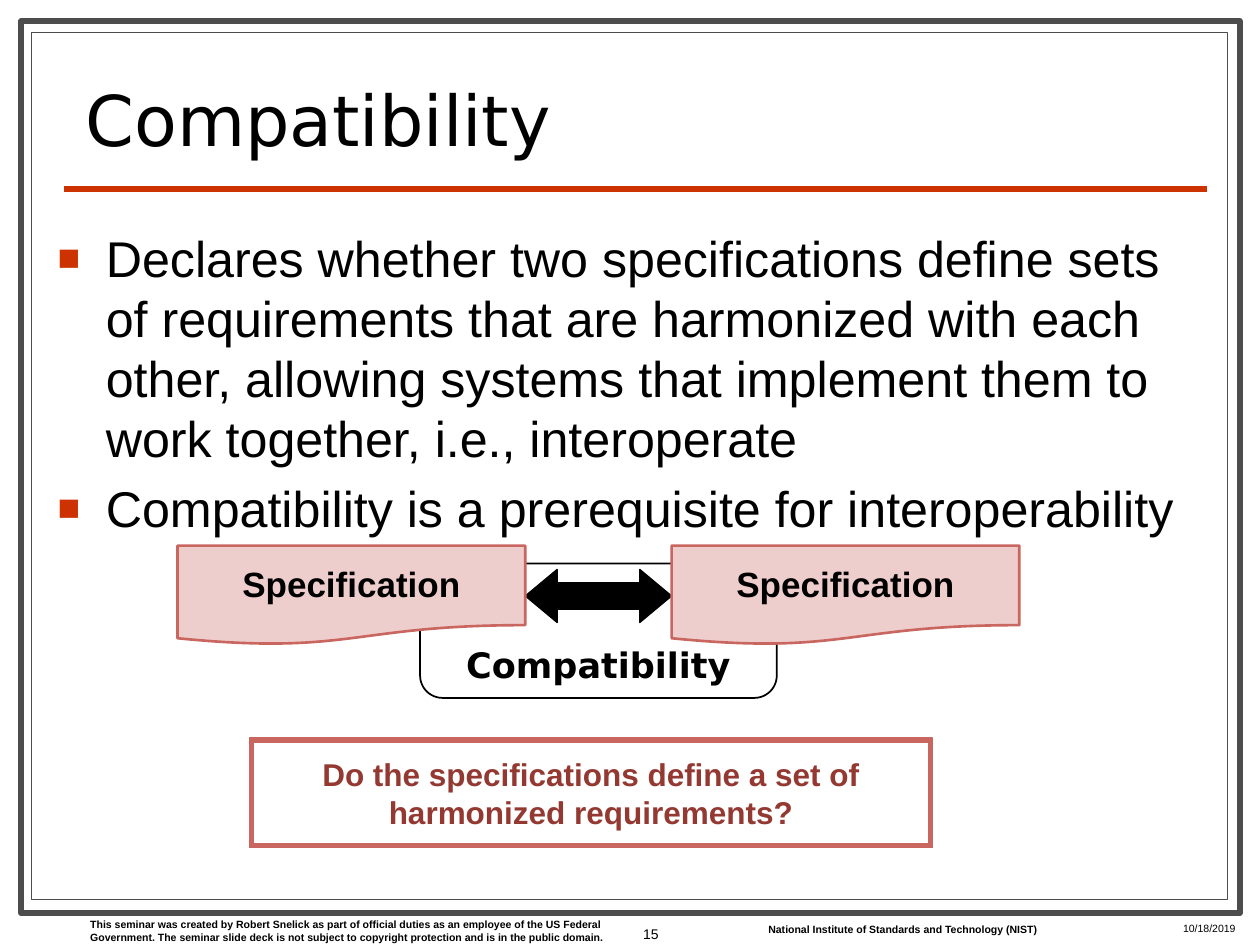
from dataclasses import dataclass

from lxml.etree import SubElement
from pptx import Presentation
from pptx.dml.color import RGBColor
from pptx.enum.shapes import MSO_CONNECTOR as Connector, MSO_SHAPE as Shape
from pptx.enum.text import MSO_ANCHOR as Anchor, MSO_AUTO_SIZE as AutoSize, PP_ALIGN as Align
from pptx.oxml.ns import qn
from pptx.util import Cm, Pt

BLACK = RGBColor(0x00, 0x00, 0x00)
WHITE = RGBColor(0xFF, 0xFF, 0xFF)
GREY = RGBColor(0x4D, 0x4D, 0x4D)
ORANGE = RGBColor(0xCC, 0x33, 0x00)
ROSE = RGBColor(0xC9, 0x66, 0x60)
PALE_ROSE = RGBColor(0xEE, 0xCE, 0xCC)
DARK_RED = RGBColor(0x94, 0x38, 0x32)
SANS = "Arial"
DISPLAY = "DejaVu Sans"


@dataclass
class Box:
    """A rectangle in centimetres."""
    left: float
    top: float
    width: float
    height: float

    def inside(self, left, top, width, height):
        """Return a box placed relative to this one."""
        return Box(self.left + left, self.top + top, width, height)

    def lengths(self):
        """Return left, top, width and height as slide lengths."""
        return [Cm(side) for side in (self.left, self.top, self.width, self.height)]


def style_font(para, size, name=SANS, color=BLACK, bold=False):
    """Set the font of a whole paragraph."""
    font = para.font
    font.size, font.name, font.bold = Pt(size), name, bold
    font.color.rgb = color


def add_figure(page, kind, box, fill, line, weight, adjustments=()):
    """Add a flat preset shape."""
    figure = page.shapes.add_shape(kind, *box.lengths())
    figure.shadow.inherit = False
    figure.fill.solid()
    figure.fill.fore_color.rgb = fill
    figure.line.color.rgb = line
    figure.line.width = Pt(weight)
    for index, value in enumerate(adjustments):
        figure.adjustments[index] = value
    return figure


def write_text(holder, text, size, align=Align.LEFT, anchor=Anchor.TOP, **font):
    """Write one wrapped paragraph and return it."""
    frame = holder.text_frame
    frame.word_wrap = True
    frame.auto_size = AutoSize.NONE
    frame.vertical_anchor = anchor
    para = frame.paragraphs[0]
    para.text = text
    para.alignment = align
    style_font(para, size, **font)
    return para


def settle_placeholder(page, holder, box):
    """Position a placeholder and bring it to the front."""
    holder.left, holder.top, holder.width, holder.height = box.lengths()
    page.shapes.element.append(holder.element)


def add_bullet(para):
    """Give a paragraph a hanging square bullet."""
    props = para._p.get_or_add_pPr()
    props.set("marL", str(Cm(0.97)))
    props.set("indent", str(-Cm(0.97)))
    color = SubElement(props, qn("a:buClr"))
    SubElement(color, qn("a:srgbClr"), val=str(ORANGE))
    SubElement(props, qn("a:buSzPct"), val="75000")
    SubElement(props, qn("a:buFont"), typeface=SANS)
    SubElement(props, qn("a:buChar"), char="■")


def draw_border(page, box):
    """Draw the double border and the rule under the title."""
    add_figure(page, Shape.RECTANGLE, box, WHITE, GREY, 3.5)
    inner = box.inside(0.21, 0.23, box.width - 0.46, box.height - 0.5)
    add_figure(page, Shape.RECTANGLE, inner, WHITE, GREY, 0.75)
    left, right, height = Cm(box.left + 0.87), Cm(box.left + 23.9), Cm(box.top + 3.38)
    rule = page.shapes.add_connector(Connector.STRAIGHT, left, height, right, height)
    rule.line.color.rgb = ORANGE
    rule.line.width = Pt(3)
    SubElement(rule.element.spPr, qn("a:effectLst"))


def place_title(page, box, text):
    """Place the slide title."""
    title = page.shapes.title
    settle_placeholder(page, title, box)
    para = write_text(title, text, 40, anchor=Anchor.BOTTOM, name=DISPLAY)
    para.line_spacing = 0.8


def place_list(page, box, items):
    """Place the bulleted list."""
    body = page.placeholders[1]
    settle_placeholder(page, body, box)
    frame = body.text_frame
    frame.word_wrap = True
    frame.auto_size = AutoSize.NONE
    for index, item in enumerate(items):
        para = frame.add_paragraph() if index else frame.paragraphs[0]
        para.text = item
        add_bullet(para)
        para.space_before = Pt(5.5 if index else 0)
        style_font(para, 28.7)


def draw_comparison(page, box):
    """Draw two specifications joined by a double arrow."""
    sheet_width, label_width = 7.01, 7.19
    label_box = box.inside((box.width - label_width) / 2, 0.36, label_width, box.height - 0.36)
    label = add_figure(page, Shape.ROUNDED_RECTANGLE, label_box, WHITE, BLACK, 1)
    write_text(label, "Compatibility", 20, Align.CENTER, Anchor.BOTTOM, name=DISPLAY, bold=True)
    gap = box.width - 2 * sheet_width
    arrow_box = box.inside(sheet_width, 0.48, gap, 1.07)
    add_figure(page, Shape.LEFT_RIGHT_ARROW, arrow_box, BLACK, BLACK, 0.75, (0.5, 0.6))
    for left in (0, sheet_width + gap):
        sheet_box = box.inside(left, 0, sheet_width, 2)
        sheet = add_figure(page, Shape.FLOWCHART_DOCUMENT, sheet_box, PALE_ROSE, ROSE, 1.5)
        para = write_text(sheet, "Specification", 20, Align.CENTER, Anchor.MIDDLE, bold=True)
        para.line_spacing = 0.93


def draw_question(page, box, text):
    """Draw the framed question."""
    frame = add_figure(page, Shape.FRAME, box, ROSE, ROSE, 0.75, (0.038,))
    write_text(frame, text, 18, Align.CENTER, Anchor.MIDDLE, color=DARK_RED, bold=True)


def place_footer(page, box):
    """Place the credit, institute, date and slide number."""
    credit = ("This seminar was created by Robert Snelick as part of official duties as an "
              "employee of the US Federal Government. The seminar slide deck is not subject "
              "to copyright protection and is in the public domain.")
    institute = "National Institute of Standards and Technology (NIST)"
    entries = [
        (credit, (1.57, 0.23, 11, 0.76), 6, Align.LEFT, Anchor.TOP, True),
        (institute, (15.24, 0.33, 6.05, 0.51), 6, Align.LEFT, Anchor.TOP, True),
        ("10/18/2019", (23.6, 0.31, 1.6, 0.41), 6, Align.LEFT, Anchor.TOP, False),
        ("15", (12.06, 0, 1.47, 1.32), 8, Align.RIGHT, Anchor.MIDDLE, False),
    ]
    for text, place, size, align, anchor, bold in entries:
        holder = page.shapes.add_textbox(*box.inside(*place).lengths())
        write_text(holder, text, size, align, anchor, bold=bold)


def main():
    """Build and save the slide."""
    deck = Presentation()
    deck.slide_width, deck.slide_height = Cm(25.4), Cm(19.05)
    page = deck.slides.add_slide(deck.slide_layouts[1])
    draw_border(page, Box(0.43, 0.43, 24.56, 17.98))
    place_title(page, Box(1.47, 1.07, 22.66, 2.29), "Compatibility")
    place_list(page, Box(0.91, 4.45, 23.3, 5.59), [
        "Declares whether two specifications define sets of requirements that are harmonized "
        "with each other, allowing systems that implement them to work together, i.e., interoperate",
        "Compatibility is a prerequisite for interoperability",
    ])
    draw_comparison(page, Box(3.58, 11, 16.97, 3.07))
    draw_question(page, Box(5.03, 14.88, 13.77, 2.21),
                  "Do the specifications define a set of harmonized requirements?")
    place_footer(page, Box(0, 18.16, 25.4, 1.32))
    deck.save("out.pptx")


if __name__ == "__main__":
    main()
